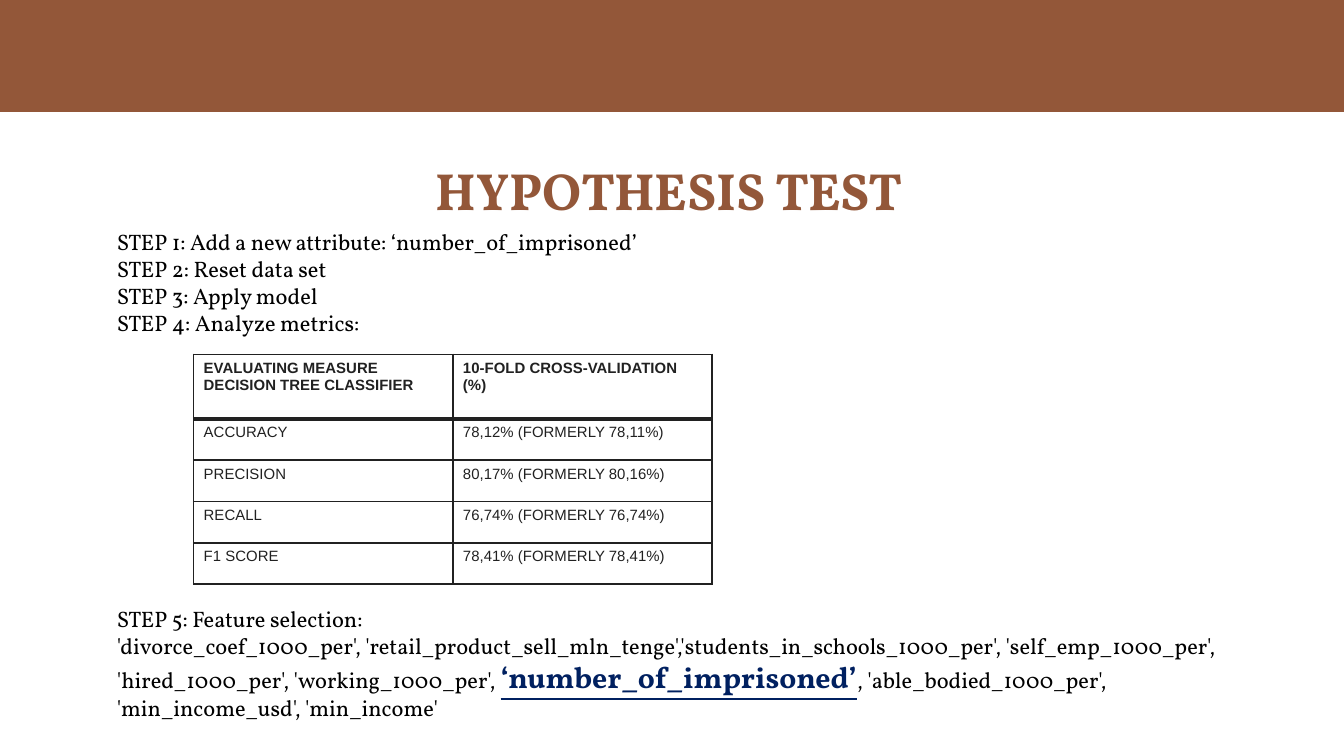
import pptx
import pptx.util
import pptx.dml.color
import pptx.enum.shapes
import pptx.enum.text
import lxml.etree as etree
from pptx.util import Cm, Pt
from pptx.oxml.ns import qn

BROWN, WHITE, BLACK, INK, NAVY = "935739", "FFFFFF", "000000", "212121", "002060"

TITLE = "HYPOTHESIS TEST"
STEPS = [
    ["STEP 1: Add a new attribute: ‘number_of_imprisoned’"],
    ["STEP 2: Reset data set"],
    ["STEP 3: Apply model"],
    ["STEP 4: Analyze metrics:"],
    ["STEP 5: Feature selection:"],
    ["'divorce_coef_1000_per', 'retail_product_sell_mln_tenge',"
     "'students_in_schools_1000_per', 'self_emp_1000_per', "
     "'hired_1000_per', 'working_1000_per', ",
     "‘number_of_imprisoned’",
     ", 'able_bodied_1000_per', 'min_income_usd', 'min_income'"],
]
ROWS = [
    ("EVALUATING MEASURE DECISION TREE CLASSIFIER", "10-FOLD CROSS-VALIDATION (%)"),
    ("ACCURACY", "78,12% (FORMERLY 78,11%)"),
    ("PRECISION", "80,17% (FORMERLY 80,16%)"),
    ("RECALL", "76,74% (FORMERLY 76,74%)"),
    ("F1 SCORE", "78,41% (FORMERLY 78,41%)"),
]

HEAD = dict(name="Vollkorn", size=Pt(28), bold=True, color=BROWN)
TEXT = dict(name="Vollkorn", size=Pt(12), bold=False, color=BLACK)
KEY = dict(name="Vollkorn", size=Pt(16), bold=True, underline=True, color=NAVY)
CELL = dict(name="Arial", size=Pt(8), bold=False, color=INK)

WIDE, HIGH, BAND = 25.4, 14.29, 2.1
TABLE_GAP = Pt(144)  # room for the table between steps 4 and 5


def rgb(code):
    return pptx.dml.color.RGBColor.from_string(code)


def style(font, look):
    for key, value in look.items():
        if key == "color":
            font.color.rgb = rgb(value)
        else:
            setattr(font, key, value)


def place(shape, *box):
    for key, value in zip(("left", "top", "width", "height"), box):
        setattr(shape, key, Cm(value))


def set_frame(frame, side, edge):
    look = dict(margin_left=Cm(side), margin_right=Cm(side),
                margin_top=Cm(edge), margin_bottom=Cm(edge), word_wrap=True,
                vertical_anchor=pptx.enum.text.MSO_ANCHOR.TOP,
                auto_size=pptx.enum.text.MSO_AUTO_SIZE.NONE)
    for key, value in look.items():
        setattr(frame, key, value)


def add_panel(slide, top, height, color, line):
    """Add a full-width rectangle behind the title."""
    panel = slide.shapes.add_shape(pptx.enum.shapes.MSO_SHAPE.RECTANGLE,
                                   0, Cm(top), Cm(WIDE), Cm(height))
    panel.shadow.inherit = False
    panel.fill.solid()
    panel.fill.fore_color.rgb = rgb(color)
    panel.line.color.rgb = rgb(color)
    panel.line.width = Pt(line)
    slide.shapes.title._element.addprevious(panel._element)


def set_border(cell, side, width):
    line = etree.SubElement(cell._tc.get_or_add_tcPr(), qn("a:ln" + side),
                            w=str(Pt(width)))
    fill = etree.SubElement(line, qn("a:solidFill"))
    etree.SubElement(fill, qn("a:srgbClr"), val=INK)


def add_title(slide):
    title = slide.shapes.title
    place(title, 0.81, 2.74, 23.67, 1.6)
    set_frame(title.text_frame, 0.25, 0.25)
    title.text_frame.text = TITLE
    para = title.text_frame.paragraphs[0]
    para.alignment = pptx.enum.text.PP_ALIGN.CENTER
    style(para.runs[0].font, HEAD)


def add_steps(slide):
    body = slide.placeholders[1]
    place(body, 1.96, 4.19, 21.36, 10.19)
    frame = body.text_frame
    set_frame(frame, 0.25, 0.13)
    for i, parts in enumerate(STEPS):
        para = frame.add_paragraph() if i else frame.paragraphs[0]
        props = para._p.get_or_add_pPr()
        props.set("marL", "0")
        props.set("indent", "0")
        etree.SubElement(props, qn("a:buNone"))
        para.alignment = pptx.enum.text.PP_ALIGN.LEFT
        para.space_before = TABLE_GAP if i == 4 else Pt(0)
        for j, part in enumerate(parts):
            run = para.add_run()
            run.text = part
            style(run.font, KEY if j == 1 else TEXT)


def add_metrics(slide):
    heights = [1.22] + [0.78] * (len(ROWS) - 1)
    table = slide.shapes.add_table(len(ROWS), 2, Cm(3.66), Cm(6.7),
                                   Cm(9.8), Cm(sum(heights))).table
    table.horz_banding = False
    for col in table.columns:
        col.width = Cm(4.9)
    for i, row in enumerate(ROWS):
        table.rows[i].height = Cm(heights[i])
        for j, text in enumerate(row):
            cell = table.cell(i, j)
            cell.text = text
            cell.margin_left = cell.margin_right = Cm(0.19)
            cell.margin_top = cell.margin_bottom = Cm(0.1)
            style(cell.text_frame.paragraphs[0].runs[0].font,
                  dict(CELL, bold=i == 0))
            for side in "LRTB":
                set_border(cell, side, 3 if (i, side) in ((0, "B"), (1, "T")) else 1)
            cell.fill.solid()
            cell.fill.fore_color.rgb = rgb(WHITE)


def main():
    deck = pptx.Presentation()
    deck.slide_width, deck.slide_height = Cm(WIDE), Cm(HIGH)
    slide = deck.slides.add_slide(deck.slide_layouts[1])
    slide.background.fill.solid()
    slide.background.fill.fore_color.rgb = rgb(INK)
    add_panel(slide, BAND, HIGH - BAND, WHITE, 2)
    add_panel(slide, 0, BAND, BROWN, 0.75)
    add_title(slide)
    add_steps(slide)
    add_metrics(slide)
    deck.save("out.pptx")


if __name__ == "__main__":
    main()
